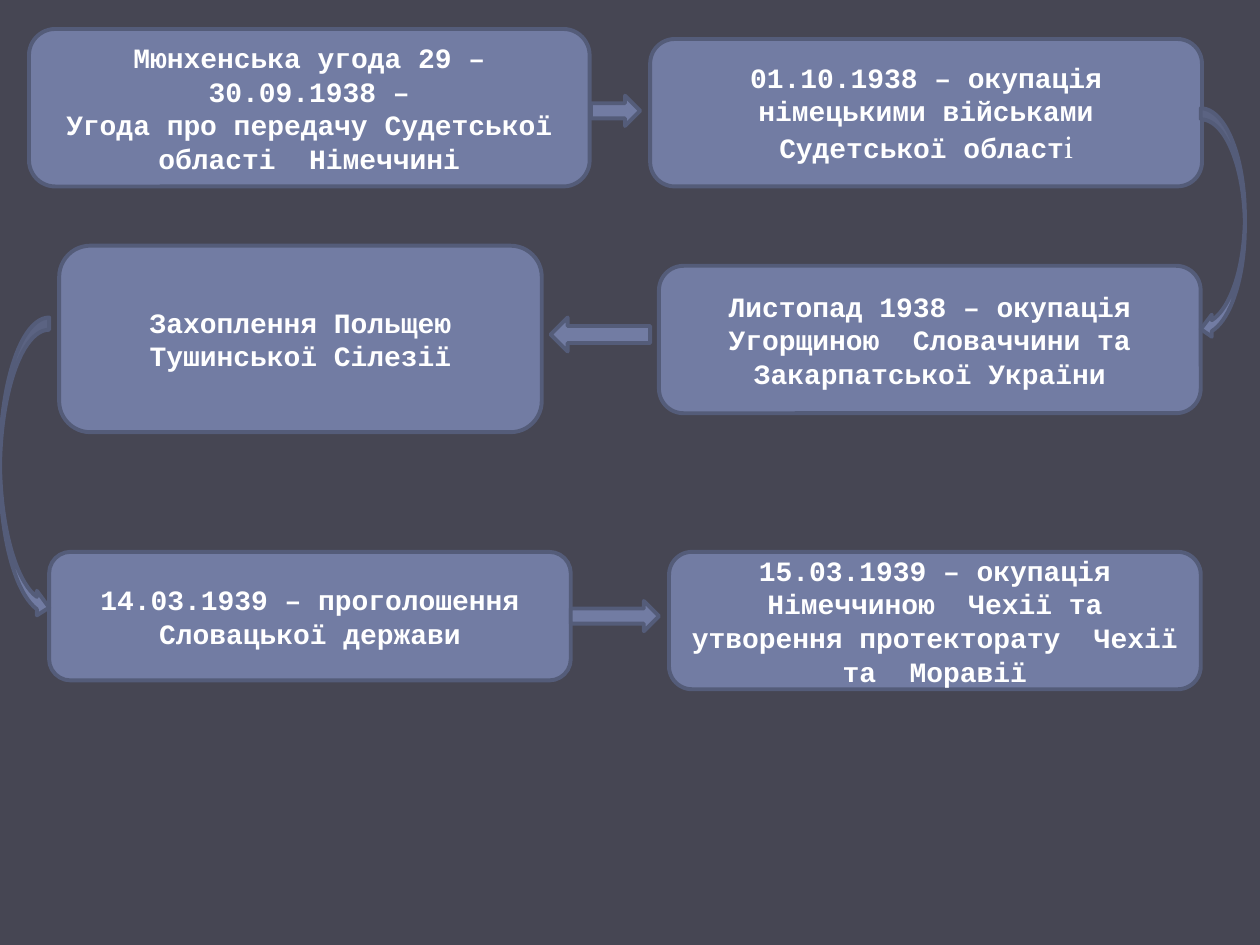
"""Build a one-slide flow of the events of 1938-1939 around Czechoslovakia."""
from dataclasses import dataclass

import pptx
import pptx.dml.color
import pptx.enum.shapes
import pptx.enum.text
import pptx.util
from pptx.util import Inches

KINDS = pptx.enum.shapes.MSO_SHAPE


@dataclass(frozen=True)
class Theme:
    background: str = "464653"
    fill: str = "727CA3"
    outline: str = "545C79"
    text: str = "FFFFFF"
    font: str = "Courier New"
    ending_font: str = "TeX Gyre Pagella"
    text_size: int = 16
    ending_size: int = 18
    outline_width: float = 2.25


theme = Theme()


def rgb(value):
    return pptx.dml.color.RGBColor.from_string(value)


def add_part(kind, bounds):
    part = slide.shapes.add_shape(kind, *(Inches(length) for length in bounds))
    part.shadow.inherit = False
    part.fill.solid()
    part.fill.fore_color.rgb = rgb(theme.fill)
    part.line.color.rgb = rgb(theme.outline)
    part.line.width = pptx.util.Pt(theme.outline_width)
    return part


presentation = pptx.Presentation()
presentation.slide_width = Inches(10)
presentation.slide_height = Inches(7.5)
slide = presentation.slides.add_slide(presentation.slide_layouts[6])
slide.background.fill.solid()
slide.background.fill.fore_color.rgb = rgb(theme.background)

events = [
    ((0.23, 0.23, 4.45, 1.25),
     "Мюнхенська угода 29 – 30.09.1938 –\nУгода про передачу Судетської області  Німеччині", ""),
    ((5.16, 0.31, 4.38, 1.17),
     "01.10.1938 – окупація німецькими військами Судетської област", "і"),
    ((0.47, 1.95, 3.83, 1.48), "Захоплення Польщею Тушинської Сілезії", ""),
    ((0.39, 4.38, 4.14, 1.02), "14.03.1939 – проголошення Словацької держави", ""),
    ((5.23, 2.11, 4.3, 1.17),
     "Листопад 1938 – окупація Угорщиною  Словаччини та Закарпатської України", ""),
    ((5.31, 4.38, 4.22, 1.09),
     "15.03.1939 – окупація Німеччиною  Чехії та утворення протекторату  Чехії та  Моравії", ""),
]
for bounds, wording, ending in events:
    event = add_part(KINDS.ROUNDED_RECTANGLE, bounds)
    frame = event.text_frame
    frame.word_wrap = True
    frame.vertical_anchor = pptx.enum.text.MSO_ANCHOR.MIDDLE
    frame.text = wording
    for paragraph in frame.paragraphs:
        paragraph.alignment = pptx.enum.text.PP_ALIGN.CENTER
        for run in paragraph.runs:
            run.font.name = theme.font
            run.font.size = pptx.util.Pt(theme.text_size)
            run.font.bold = True
            run.font.color.rgb = rgb(theme.text)
    if ending:
        last_letter = frame.paragraphs[-1].add_run()
        last_letter.text = ending
        last_letter.font.name = theme.ending_font
        last_letter.font.size = pptx.util.Pt(theme.ending_size)
        last_letter.font.bold = False
        last_letter.font.color.rgb = rgb(theme.text)

transitions = [
    (KINDS.RIGHT_ARROW, (4.69, 0.76, 0.39, 0.24)),
    (KINDS.RIGHT_ARROW, (4.53, 4.77, 0.7, 0.24)),
    (KINDS.LEFT_ARROW, (4.37, 2.52, 0.79, 0.27)),
    (KINDS.CURVED_LEFT_ARROW, (9.53, 0.86, 0.35, 1.84)),
    (KINDS.CURVED_RIGHT_ARROW, (0, 2.52, 0.39, 2.4)),
]
for kind, bounds in transitions:
    add_part(kind, bounds)

presentation.save("out.pptx")
